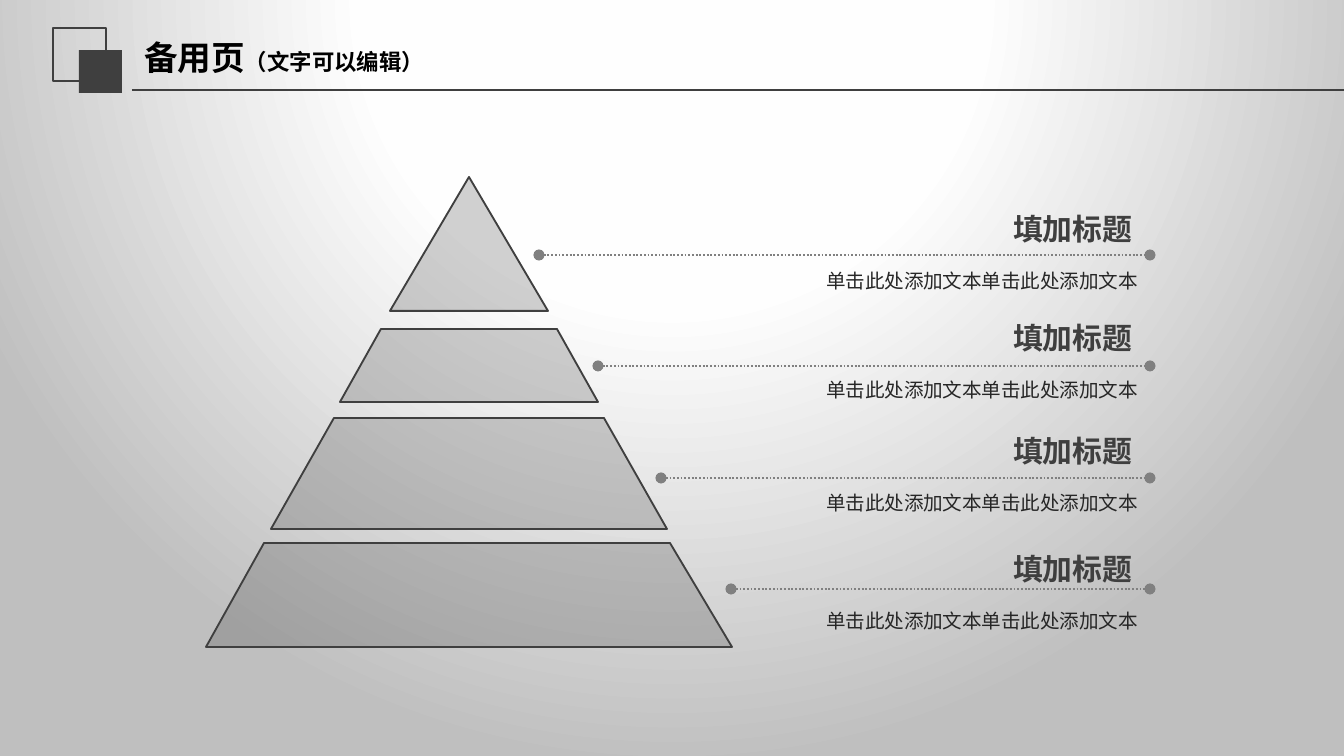
from lxml import etree
from pptx import Presentation
from pptx.dml.color import RGBColor
from pptx.enum.dml import MSO_LINE
from pptx.enum.shapes import MSO_CONNECTOR, MSO_SHAPE
from pptx.enum.text import MSO_ANCHOR, MSO_AUTO_SIZE
from pptx.oxml import parse_xml
from pptx.oxml.ns import nsdecls, qn
from pptx.util import Pt

SCALE = 914400 / 134.4
DARK = RGBColor(0x3F, 0x3F, 0x3F)
GREY = RGBColor(0x80, 0x80, 0x80)
INK = RGBColor(0x26, 0x26, 0x26)
BLACK = RGBColor(0, 0, 0)
CJK_FONT = "Noto Sans CJK SC"
LATIN_FONT = "Calibri"

# Corners of each pyramid layer below the tip: top left, top right, bottom right, bottom left
LAYERS = [
    [(381, 329), (557, 329), (598, 402), (340, 402)],
    [(334, 418), (604, 418), (667, 529), (271, 529)],
    [(264, 543), (670, 543), (732, 647), (206, 647)],
]
# Leader start, leader height, heading top
ROWS = [(539, 255, 204), (598, 366, 313), (661, 478, 426), (731, 589, 544)]
LEADER_END = 1150


def px(length):
    return round(length * SCALE)


def set_background(page):
    stops = [(0, "FFFFFF"), (40, "FEFEFE"), (100, "BFBFBF")]
    stop_xml = "".join(
        f'<a:gs pos="{pos * 1000}"><a:srgbClr val="{color}"/></a:gs>'
        for pos, color in stops)
    page.element.cSld.insert(0, parse_xml(
        f'<p:bg {nsdecls("p", "a")}><p:bgPr><a:gradFill rotWithShape="1">'
        f'<a:gsLst>{stop_xml}</a:gsLst><a:path path="circle">'
        '<a:fillToRect l="50000" t="-80000" r="50000" b="180000"/></a:path>'
        '</a:gradFill><a:effectLst/></p:bgPr></p:bg>'))


def paint(shape, fill=None, line=None, line_width=1, opacity=100):
    shape.shadow.inherit = False
    if fill is None:
        shape.fill.background()
    else:
        shape.fill.solid()
        shape.fill.fore_color.rgb = fill
        if opacity < 100:
            color = shape._element.spPr.find(qn("a:solidFill"))[0]
            etree.SubElement(color, qn("a:alpha"), val=str(opacity * 1000))
    if line is None:
        shape.line.fill.background()
    else:
        shape.line.color.rgb = line
        shape.line.width = Pt(line_width)


def add_preset(page, kind, left, top, width, height, **style):
    shape = page.shapes.add_shape(kind, px(left), px(top), px(width), px(height))
    paint(shape, **style)


def add_polygon(page, points, **style):
    builder = page.shapes.build_freeform(*points[0], scale=SCALE)
    builder.add_line_segments(points[1:], close=True)
    paint(builder.convert_to_shape(), **style)


def add_rule(page, start, end, y, color, width, dotted=False):
    rule = page.shapes.add_connector(
        MSO_CONNECTOR.STRAIGHT, px(start), px(y), px(end), px(y))
    rule.line.color.rgb = color
    rule.line.width = Pt(width)
    if dotted:
        rule.line.dash_style = MSO_LINE.ROUND_DOT
        outline = rule._element.spPr.find(qn("a:ln"))
        for tag in ("a:headEnd", "a:tailEnd"):
            etree.SubElement(outline, qn(tag), type="oval")
    etree.SubElement(rule._element.spPr, qn("a:effectLst"))


def add_text(page, left, top, width, height, wrap=True, grow=True,
             anchor=MSO_ANCHOR.TOP):
    box = page.shapes.add_textbox(px(left), px(top), px(width), px(height))
    frame = box.text_frame
    frame.word_wrap = wrap
    frame.auto_size = MSO_AUTO_SIZE.SHAPE_TO_FIT_TEXT if grow else MSO_AUTO_SIZE.NONE
    frame.vertical_anchor = anchor
    return frame.paragraphs[0]


def add_span(para, text, size, color, bold=False, font=CJK_FONT):
    span = para.add_run()
    span.text = text
    span.font.size = Pt(size)
    span.font.bold = bold
    span.font.color.rgb = color
    span.font.name = font
    etree.SubElement(span.font._element, qn("a:ea"), typeface=CJK_FONT)


def add_header(page):
    add_preset(page, MSO_SHAPE.RECTANGLE, 53, 28, 53, 53, line=DARK, line_width=0.75)
    add_preset(page, MSO_SHAPE.RECTANGLE, 79, 50, 43, 43, fill=DARK)
    add_rule(page, 132, 1344, 90, DARK, 1.25)
    para = add_text(page, 131, 28, 478, 58, grow=False, anchor=MSO_ANCHOR.MIDDLE)
    add_span(para, "备用页", 18, BLACK, bold=True)
    add_span(para, "（文字可以编辑）", 12, BLACK, bold=True, font=LATIN_FONT)


def add_pyramid(page):
    style = dict(fill=DARK, line=DARK, opacity=24)
    add_preset(page, MSO_SHAPE.ISOSCELES_TRIANGLE, 390, 177, 158, 134, **style)
    for corners in LAYERS:
        add_polygon(page, corners, **style)


def add_row(page, start, y, heading_top):
    add_rule(page, start, LEADER_END, y, GREY, 1, dotted=True)
    heading = add_text(page, 1000, heading_top, 148, 50, wrap=False)
    add_span(heading, "填加标题", 16, DARK, bold=True)
    body = add_text(page, 813, heading_top + 47, 345, 44)
    body.line_spacing = 1.5
    add_span(body, "单击此处添加文本单击此处添加文本", 10.5, INK)


def main():
    deck = Presentation()
    deck.slide_width, deck.slide_height = px(1344), px(756)
    page = deck.slides.add_slide(deck.slide_layouts[6])
    set_background(page)
    add_header(page)
    add_pyramid(page)
    for row in ROWS:
        add_row(page, *row)
    deck.save("out.pptx")


if __name__ == "__main__":
    main()
